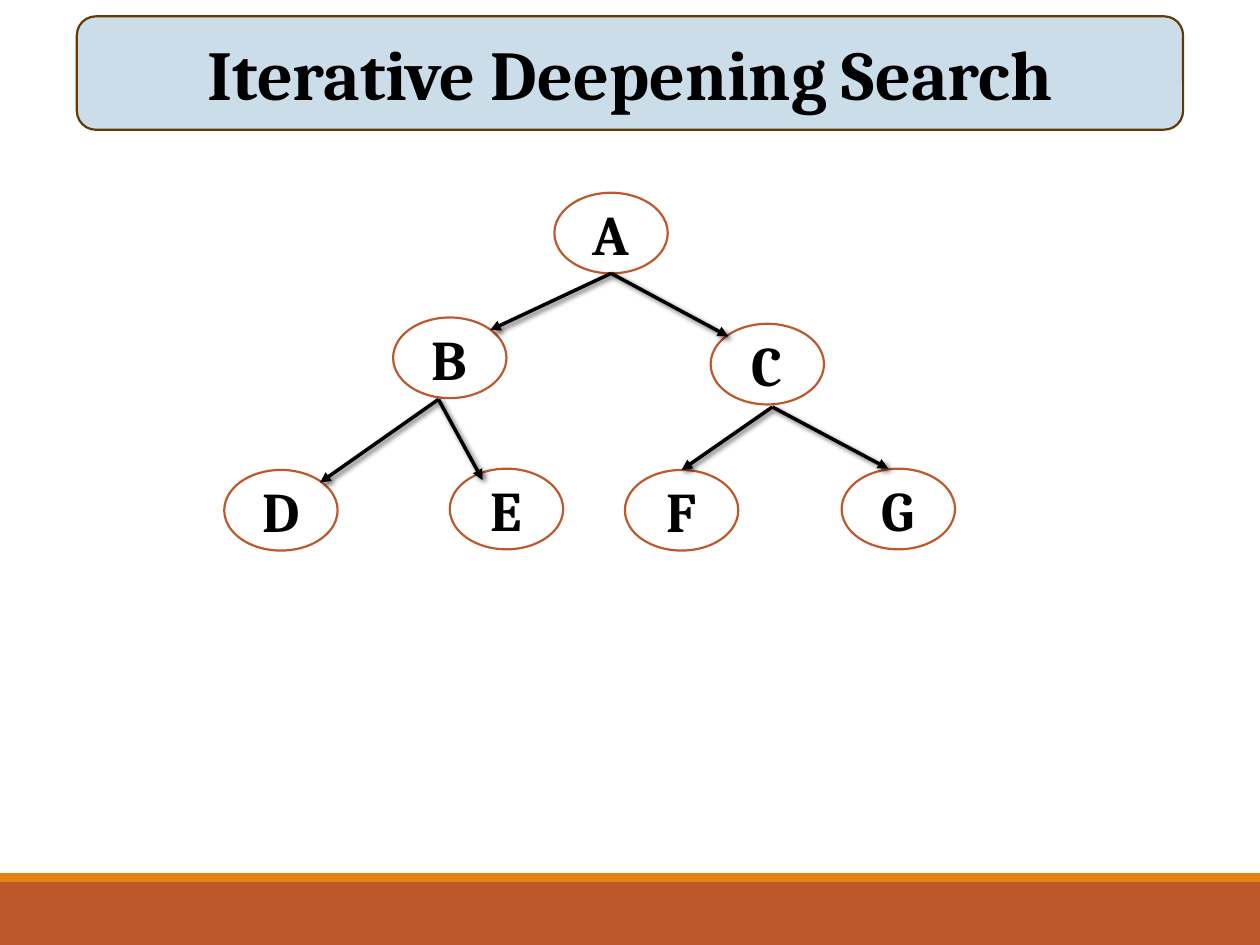
from lxml import etree
from pptx import Presentation
from pptx.dml.color import RGBColor
from pptx.enum import shapes, text
from pptx.oxml import parse_xml
from pptx.oxml.ns import qn
from pptx.util import Inches, Pt

COLORS = {
    "black": "000000", "white": "FFFFFF", "rust": "BD582C",
    "orange": "E48312", "title_fill": "CCDDEA", "title_line": "643908",
}
SHADOW = (
    '<a:effectLst xmlns:a="http://schemas.openxmlformats.org/drawingml/2006/main">'
    '<a:outerShdw blurRad="38100" dist="25400" dir="2700000" algn="ctr" rotWithShape="0">'
    f'<a:srgbClr val="{COLORS["black"]}"><a:alpha val="60000"/></a:srgbClr>'
    '</a:outerShdw></a:effectLst>'
)
NODE_WIDTH, NODE_HEIGHT = 0.9, 0.64

prs = Presentation()
prs.slide_width, prs.slide_height = Inches(10), Inches(7.5)
slide = prs.slides.add_slide(prs.slide_layouts[6])


def rgb(name):
    return RGBColor.from_string(COLORS[name])


def add_box(preset, left, top, width, height, fill, line=None, label="", size=32):
    """Add a filled shape, optionally outlined and with a bold centred label."""
    box = slide.shapes.add_shape(
        preset, Inches(left), Inches(top), Inches(width), Inches(height))
    box.shadow.inherit = False
    box.fill.solid()
    box.fill.fore_color.rgb = rgb(fill)
    if line:
        box.line.color.rgb = rgb(line)
        box.line.width = Pt(1.25)
    else:
        box.line.fill.background()
    if label:
        box.text_frame.text = label
        box.text_frame.vertical_anchor = text.MSO_ANCHOR.MIDDLE
        paragraph = box.text_frame.paragraphs[0]
        paragraph.alignment = text.PP_ALIGN.CENTER
        font = paragraph.runs[0].font
        font.name, font.size, font.bold = "Cambria", Pt(size), True
        font.color.rgb = rgb("black")


# Footer bands and title
add_box(shapes.MSO_SHAPE.RECTANGLE, 0, 7, 10, 0.5, "rust")
add_box(shapes.MSO_SHAPE.RECTANGLE, 0, 6.93, 10, 0.07, "orange")
add_box(shapes.MSO_SHAPE.ROUNDED_RECTANGLE, 0.61, 0.13, 8.78, 0.9,
        "title_fill", "title_line", "Iterative Deepening Search", 40)

# Search tree nodes: left, top
nodes = {
    "A": (4.4, 1.53),
    "B": (3.12, 2.52), "C": (5.64, 2.57),
    "D": (1.78, 3.73), "E": (3.57, 3.72), "F": (4.96, 3.73), "G": (6.68, 3.72),
}
for letter, (left, top) in nodes.items():
    add_box(shapes.MSO_SHAPE.OVAL, left, top, NODE_WIDTH, NODE_HEIGHT,
            "white", "rust", letter)

# Each parent's exit point with the arrow tips at its two children
branches = {
    (4.85, 2.17): [(3.89, 2.62), (5.78, 2.67)],
    (3.48, 3.17): [(2.54, 3.83), (3.83, 3.81)],
    (6.13, 3.23): [(5.41, 3.73), (7.05, 3.72)],
}
for start, tips in branches.items():
    for tip in tips:
        arrow = slide.shapes.add_connector(
            shapes.MSO_CONNECTOR.STRAIGHT, *map(Inches, start + tip))
        arrow.line.color.rgb = rgb("black")
        arrow.line.width = Pt(2)
        properties = arrow.element.spPr
        etree.SubElement(properties.find(qn("a:ln")), qn("a:tailEnd"), type="triangle")
        properties.append(parse_xml(SHADOW))

prs.save("out.pptx")
